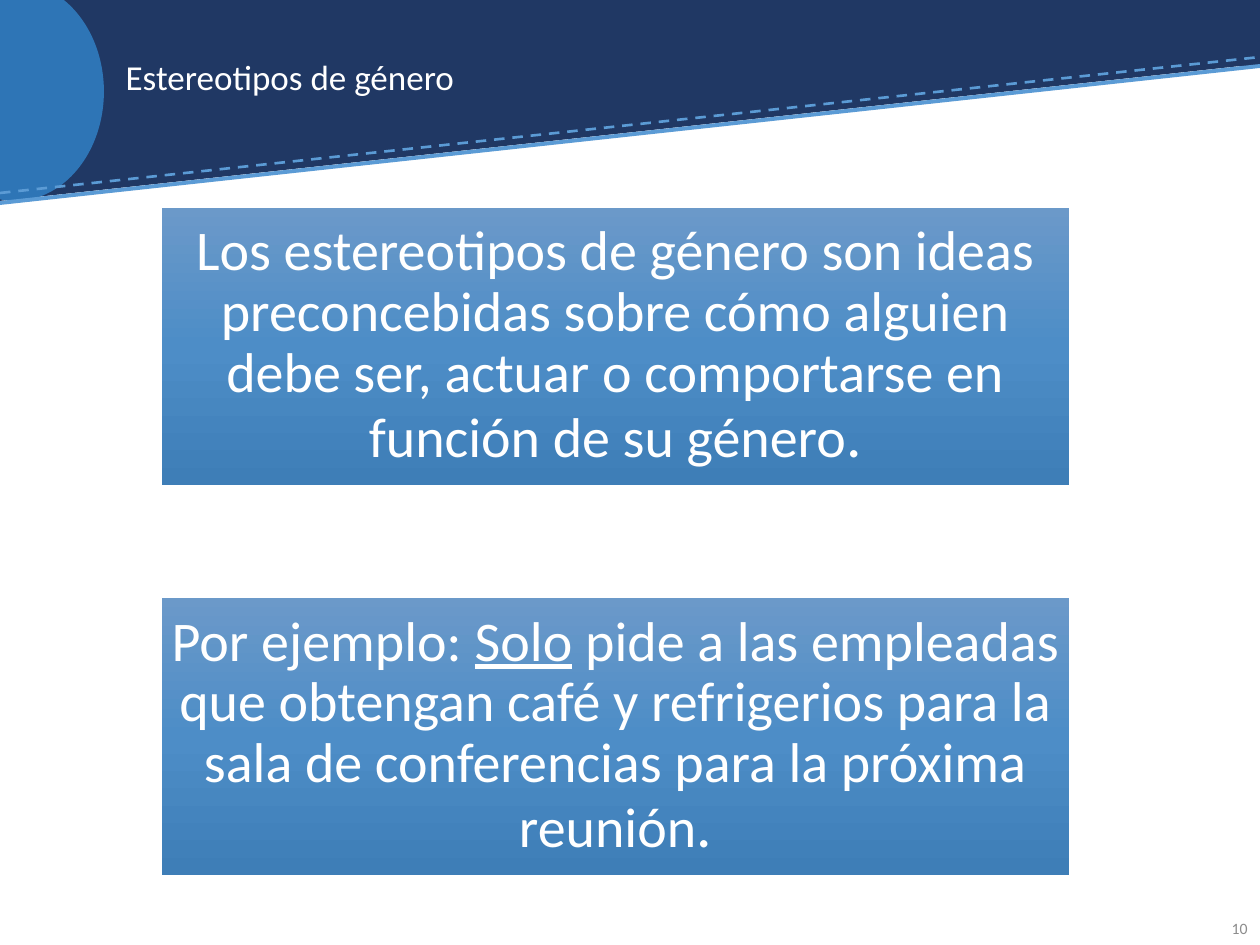
"""Build the slide on gender stereotypes."""
from copy import deepcopy

from pptx import Presentation
from pptx.dml.color import RGBColor
from pptx.enum.dml import MSO_LINE
from pptx.enum.shapes import MSO_CONNECTOR, MSO_SHAPE
from pptx.enum.text import MSO_ANCHOR, PP_ALIGN
from pptx.oxml.ns import qn
from pptx.oxml.xmlchemy import OxmlElement
from pptx.util import Pt

PX = 914400 / 126
NAVY, BLUE, SKY, WHITE, GREY = "203864", "2E75B6", "5B9BD5", "FFFFFF", "8C8C8C"
PANEL_GRADIENT = [(0, "6B99C9"), (0.5, "4D8DC7"), (1, "3E7EB7")]

TITLE = "Estereotipos de género"
NUMBER = "10"
BODY = {"size": Pt(32)}
UNDERLINED = {"size": Pt(32), "underline": True}
PERIOD = {"size": Pt(35)}
PANELS = [
    [
        ("Los estereotipos de género son ideas preconcebidas sobre cómo alguien "
         "debe ser, actuar o comportarse en función de su género", BODY),
        (".", PERIOD),
    ],
    [
        ("Por ejemplo: ", BODY),
        ("Solo", UNDERLINED),
        (" pide a las empleadas que obtengan café y refrigerios para la sala de "
         "conferencias para la próxima reunión", BODY),
        (".", PERIOD),
    ],
]
PANEL_LEFT, PANEL_TOP, PANEL_WIDTH, PANEL_HEIGHT, PANEL_STEP = 162, 208, 907, 277, 390

BANNER = [
    (MSO_SHAPE.RECTANGLE, (0, 0, 1260, 66), NAVY, False),
    (MSO_SHAPE.RIGHT_TRIANGLE, (0, 64, 1260, 137), NAVY, True),
    (MSO_SHAPE.OVAL, (-74, -18, 178, 219), BLUE, False),
]
RULES = [
    ((0, 193, 1260, 57), 1.5, MSO_LINE.DASH),
    ((0, 203, 1260, 66), 2.25, MSO_LINE.SOLID),
]


def color(value):
    return RGBColor.from_string(value)


def emu(lengths):
    return [round(length * PX) for length in lengths]


def add_plain_shape(page, kind, area):
    shape = page.shapes.add_shape(kind, *emu(area))
    shape.shadow.inherit = False
    shape.line.fill.background()
    return shape


def add_rule(page, ends, width, dash):
    rule = page.shapes.add_connector(MSO_CONNECTOR.STRAIGHT, *emu(ends))
    rule.line.color.rgb = color(SKY)
    rule.line.width = Pt(width)
    rule.line.dash_style = dash
    rule.element.spPr.append(OxmlElement("a:effectLst"))


def fill_gradient(shape, stops):
    shape.fill.gradient()
    shape.fill.gradient_angle = 270
    stop_list = shape.element.spPr.find(".//" + qn("a:gsLst"))
    stop_list.append(deepcopy(stop_list[0]))
    for stop, (position, value) in zip(shape.fill.gradient_stops, stops):
        stop.position = position
        stop.color.rgb = color(value)


def write(shape, spans, align, ink=WHITE, spacing=0.9):
    frame = shape.text_frame
    frame.word_wrap = True
    frame.vertical_anchor = MSO_ANCHOR.MIDDLE
    paragraph = frame.paragraphs[0]
    paragraph.alignment = align
    paragraph.line_spacing = spacing
    for text, formats in spans:
        span = paragraph.add_run()
        span.text = text
        span.font.color.rgb = color(ink)
        for name, value in {"name": "Calibri", **formats}.items():
            setattr(span.font, name, value)


def main():
    deck = Presentation()
    deck.slide_width, deck.slide_height = emu((1260, 945))
    page = deck.slides.add_slide(deck.slide_layouts[5])

    for kind, area, fill, flipped in BANNER:
        shape = add_plain_shape(page, kind, area)
        shape.fill.solid()
        shape.fill.fore_color.rgb = color(fill)
        if flipped:
            shape.element.spPr.xfrm.set("flipV", "1")
    for rule in RULES:
        add_rule(page, *rule)

    title = page.shapes.title
    page.shapes.element.append(title.element)
    title.left, title.top, title.width, title.height = emu((113, 25, 1014, 108))
    write(title, [(TITLE, {"size": Pt(20)})], PP_ALIGN.LEFT)

    number = page.shapes.add_textbox(*emu((1193, 903, 67, 50)))
    write(number, [(NUMBER, {"size": Pt(9)})], PP_ALIGN.RIGHT, GREY, 1.0)

    for index, spans in enumerate(PANELS):
        top = PANEL_TOP + index * PANEL_STEP
        panel = add_plain_shape(
            page, MSO_SHAPE.RECTANGLE, (PANEL_LEFT, top, PANEL_WIDTH, PANEL_HEIGHT))
        fill_gradient(panel, PANEL_GRADIENT)
        for side in ("left", "top", "right", "bottom"):
            setattr(panel.text_frame, f"margin_{side}", round(2 * PX))
        write(panel, spans, PP_ALIGN.CENTER)

    deck.save("out.pptx")


if __name__ == "__main__":
    main()
